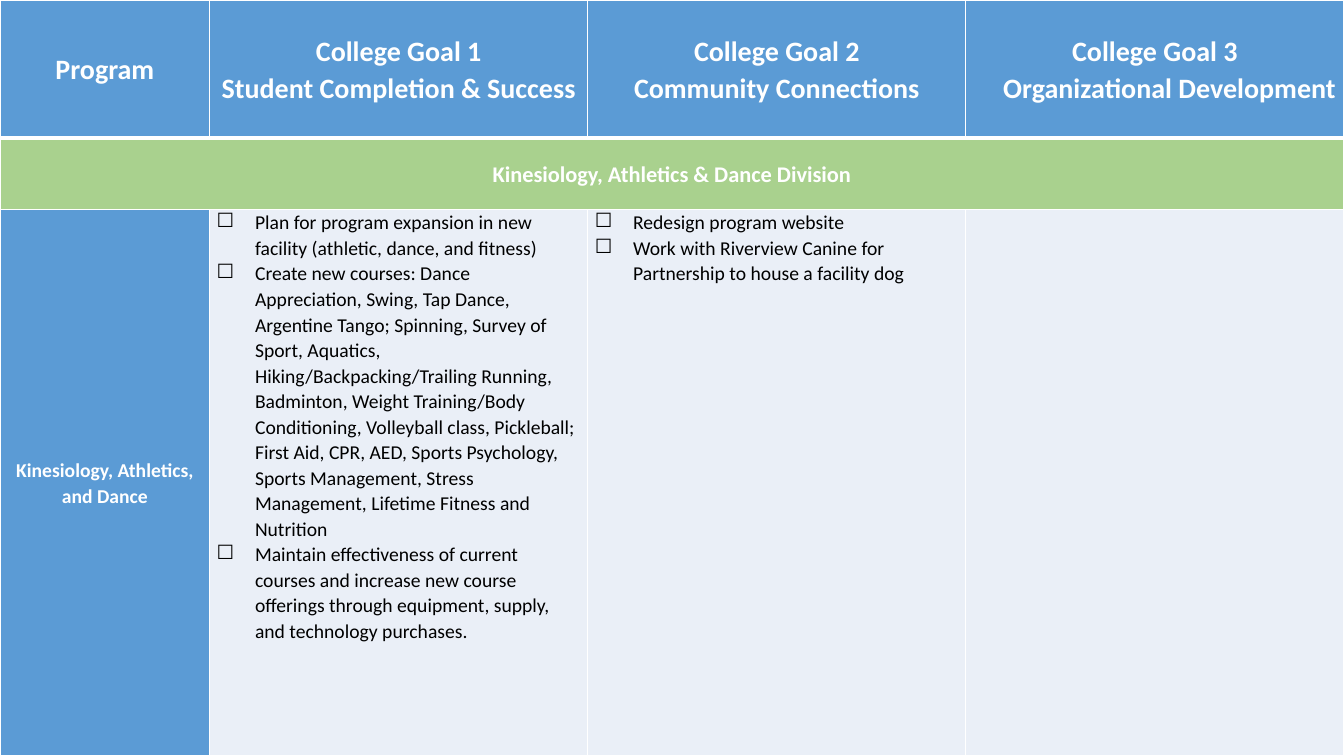
from lxml.etree import SubElement
from pptx import Presentation
from pptx.dml.color import RGBColor
from pptx.enum.text import MSO_ANCHOR, PP_ALIGN
from pptx.oxml.ns import qn
from pptx.util import Inches, Pt

WHITE = RGBColor(0xFF, 0xFF, 0xFF)
BLACK = RGBColor(0x00, 0x00, 0x00)
BLUE = RGBColor(0x5B, 0x9B, 0xD5)
GREEN = RGBColor(0xA9, 0xD1, 0x8E)
PALE_BLUE = RGBColor(0xEA, 0xEF, 0xF7)

COLUMN_WIDTHS = [2.08, 3.75, 3.75, 3.75]
ROW_HEIGHTS = [1.37, 0.71, 5.42]
HEADERS = [
    ["Program"],
    ["College Goal 1", "Student Completion & Success"],
    ["College Goal 2", "Community Connections"],
    ["College Goal 3", "Organizational Development"],
]
DIVISION = "Kinesiology, Athletics & Dance Division"
PROGRAM = "Kinesiology, Athletics, and Dance"
GOAL_TASKS = [
    [
        "Plan for program expansion in new facility (athletic, dance, and fitness)",
        "Create new courses: Dance Appreciation, Swing, Tap Dance, Argentine Tango; "
        "Spinning, Survey of Sport, Aquatics, Hiking/Backpacking/Trailing Running, "
        "Badminton, Weight Training/Body Conditioning, Volleyball class, Pickleball; "
        "First Aid, CPR, AED, Sports Psychology, Sports Management, Stress "
        "Management, Lifetime Fitness and Nutrition",
        "Maintain effectiveness of current courses and increase new course "
        "offerings through equipment, supply, and technology purchases.",
    ],
    [
        "Redesign program website",
        "Work with Riverview Canine for Partnership to house a facility dog",
    ],
    [],
]


def add_border(cell, side, width):
    line = SubElement(cell._tc.get_or_add_tcPr(), qn(f"a:ln{side}"), w=str(Pt(width)))
    fill = SubElement(line, qn("a:solidFill"))
    SubElement(fill, qn("a:srgbClr"), val=str(WHITE))


def style_cell(cell, color, top=1, bottom=1):
    for side, width in (("L", 1), ("R", 1), ("T", top), ("B", bottom)):
        add_border(cell, side, width)
    cell.fill.solid()
    cell.fill.fore_color.rgb = color
    cell.margin_left = cell.margin_right = Inches(0.07)
    cell.margin_top = cell.margin_bottom = 0


def set_indent(paragraph, left, first_line=0):
    properties = paragraph._p.get_or_add_pPr()
    properties.set("marL", str(Inches(left)))
    properties.set("indent", str(Inches(first_line)))


def add_paragraph(cell, index, text, size, color, bold):
    frame = cell.text_frame
    paragraph = frame.add_paragraph() if index else frame.paragraphs[0]
    paragraph.line_spacing = 1.07
    run = paragraph.add_run()
    run.text = text
    run.font.name = "Calibri"
    run.font.size = Pt(size)
    run.font.bold = bold
    run.font.color.rgb = color
    return paragraph


def write_heading(cell, lines, size):
    cell.vertical_anchor = MSO_ANCHOR.MIDDLE
    for index, line in enumerate(lines):
        paragraph = add_paragraph(cell, index, line, size, WHITE, True)
        paragraph.alignment = PP_ALIGN.CENTER


def write_checklist(cell, tasks):
    cell.vertical_anchor = MSO_ANCHOR.TOP
    for index, task in enumerate(tasks):
        paragraph = add_paragraph(cell, index, task, 14, BLACK, False)
        set_indent(paragraph, 0.38, -0.38)
        SubElement(paragraph._p.get_or_add_pPr(), qn("a:buChar"), char="☐")


def add_goal_table(slide):
    table = slide.shapes.add_table(
        len(ROW_HEIGHTS), len(COLUMN_WIDTHS), 0, 0, Inches(13.33), Inches(7.5)
    ).table
    table.horz_banding = False
    for column, width in zip(table.columns, COLUMN_WIDTHS):
        column.width = Inches(width)
    for row, height in zip(table.rows, ROW_HEIGHTS):
        row.height = Inches(height)
    return table


def main():
    presentation = Presentation()
    presentation.slide_width = Inches(13.33)
    presentation.slide_height = Inches(7.5)
    slide = presentation.slides.add_slide(presentation.slide_layouts[6])
    table = add_goal_table(slide)

    for column, lines in enumerate(HEADERS):
        style_cell(table.cell(0, column), BLUE, bottom=3)
        style_cell(table.cell(1, column), GREEN, top=3)
        style_cell(table.cell(2, column), PALE_BLUE if column else BLUE)
        write_heading(table.cell(0, column), lines, 20)

    last_heading = table.cell(0, 3).text_frame.paragraphs[1]
    last_heading.alignment = PP_ALIGN.LEFT
    set_indent(last_heading, 0.3)

    table.cell(1, 0).merge(table.cell(1, 3))
    write_heading(table.cell(1, 0), [DIVISION], 16)
    write_heading(table.cell(2, 0), [PROGRAM], 14)
    for column, tasks in enumerate(GOAL_TASKS, start=1):
        write_checklist(table.cell(2, column), tasks)

    presentation.save("out.pptx")


if __name__ == "__main__":
    main()
